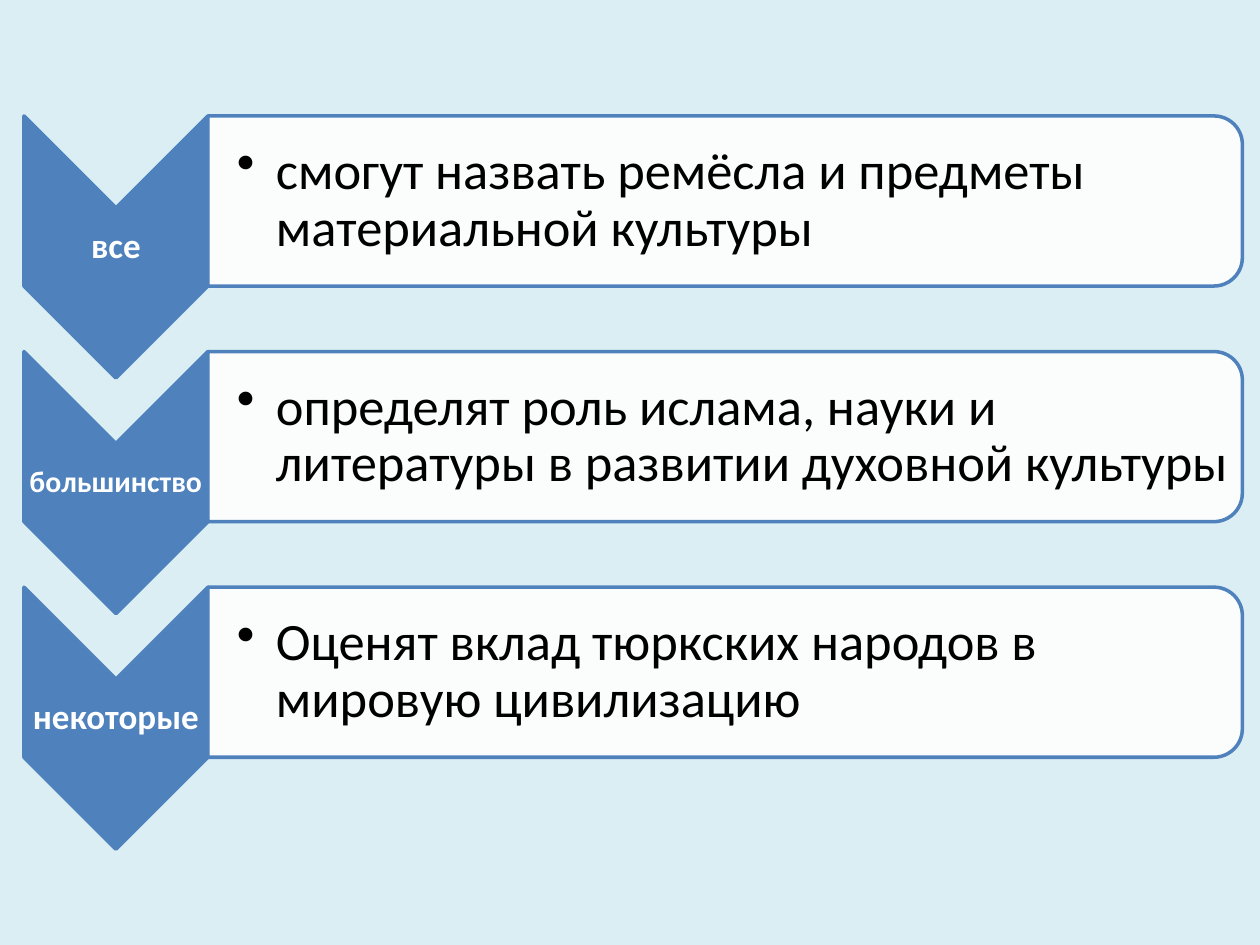
import pptx
import pptx.util
import pptx.dml.color
import pptx.enum.shapes
import pptx.enum.text
import pptx.oxml.ns
import lxml.etree

Inches = pptx.util.Inches
Pt = pptx.util.Pt
SHAPES = pptx.enum.shapes.MSO_SHAPE
ALIGN = pptx.enum.text.PP_ALIGN
qn = pptx.oxml.ns.qn

COLORS = {"page": "DBEEF4", "blue": "4F81BD", "white": "FFFFFF", "black": "000000"}
FONT = "Calibri"
ROWS = [
    ("все", 20, "смогут назвать ремёсла и предметы материальной культуры"),
    ("большинство", 17, "определят роль ислама, науки и литературы в развитии духовной культуры"),
    ("некоторые", 20, "Оценят вклад тюркских народов в мировую цивилизацию"),
]
LEFT, TOP, WIDTH, PITCH = 0.19, 0.92, 9.67, 1.87
CHEVRON_WIDTH, CHEVRON_HEIGHT, PANEL_HEIGHT = 1.46, 2.08, 1.35


def color(name):
    return pptx.dml.color.RGBColor.from_string(COLORS[name])


def add_turned_shape(group, kind, left, top, width, height, fill):
    middle_x, middle_y = left + width / 2, top + height / 2
    shape = group.shapes.add_shape(
        kind, Inches(middle_x - height / 2), Inches(middle_y - width / 2),
        Inches(height), Inches(width))
    shape.rotation = 90
    shape.shadow.inherit = False
    shape.fill.solid()
    shape.fill.fore_color.rgb = color(fill)
    shape.line.color.rgb = color("blue")
    shape.line.width = Pt(2)
    return shape


def add_text(group, left, top, width, height, text, size, ink, bold, margins):
    box = group.shapes.add_textbox(Inches(left), Inches(top), Inches(width), Inches(height))
    frame = box.text_frame
    frame.word_wrap = True
    frame.vertical_anchor = pptx.enum.text.MSO_ANCHOR.MIDDLE
    frame.margin_left = Inches(margins[0])
    frame.margin_top = frame.margin_right = frame.margin_bottom = Inches(margins[1])
    para = frame.paragraphs[0]
    para.line_spacing = 0.9
    span = para.add_run()
    span.text = text
    span.font.name = FONT
    span.font.size = Pt(size)
    span.font.bold = bold
    span.font.color.rgb = color(ink)
    return para


def add_bullet(para, indent):
    properties = para._p.get_or_add_pPr()
    properties.set("marL", str(Inches(indent)))
    properties.set("indent", str(-Inches(indent)))
    lxml.etree.SubElement(properties, qn("a:buChar")).set("char", "•")


def add_chevron(group, left, top, label, size):
    add_turned_shape(group, SHAPES.CHEVRON, left, top, CHEVRON_WIDTH, CHEVRON_HEIGHT, "blue")
    notch = CHEVRON_WIDTH / 2
    para = add_text(group, left, top + notch, CHEVRON_WIDTH, CHEVRON_HEIGHT - 2 * notch,
                    label, size, "white", True, (0.01, 0.01))
    para.alignment = ALIGN.CENTER


def add_panel(group, left, top, width, text):
    panel = add_turned_shape(group, SHAPES.ROUND_2_SAME_RECTANGLE,
                             left, top, width, PANEL_HEIGHT, "white")
    fill_color = panel._element.spPr.find(qn("a:solidFill")).find(qn("a:srgbClr"))
    lxml.etree.SubElement(fill_color, qn("a:alpha")).set("val", "90000")
    inset = 0.06
    para = add_text(group, left, top + inset, width - inset, PANEL_HEIGHT - 2 * inset,
                    text, 30, "black", False, (0.23, 0.02))
    para.level = 1
    add_bullet(para, 0.31)


def add_row(page, left, top, width, label, size, text):
    group = page.shapes.add_group_shape()
    add_chevron(group, left, top, label, size)
    add_panel(group, left + CHEVRON_WIDTH, top, width - CHEVRON_WIDTH, text)


def main():
    deck = pptx.Presentation()
    deck.slide_width, deck.slide_height = Inches(10), Inches(7.5)
    page = deck.slides.add_slide(deck.slide_layouts[6])
    page.background.fill.solid()
    page.background.fill.fore_color.rgb = color("page")
    for index, (label, size, text) in enumerate(ROWS):
        add_row(page, LEFT, TOP + index * PITCH, WIDTH, label, size, text)
    deck.save("out.pptx")


if __name__ == "__main__":
    main()
